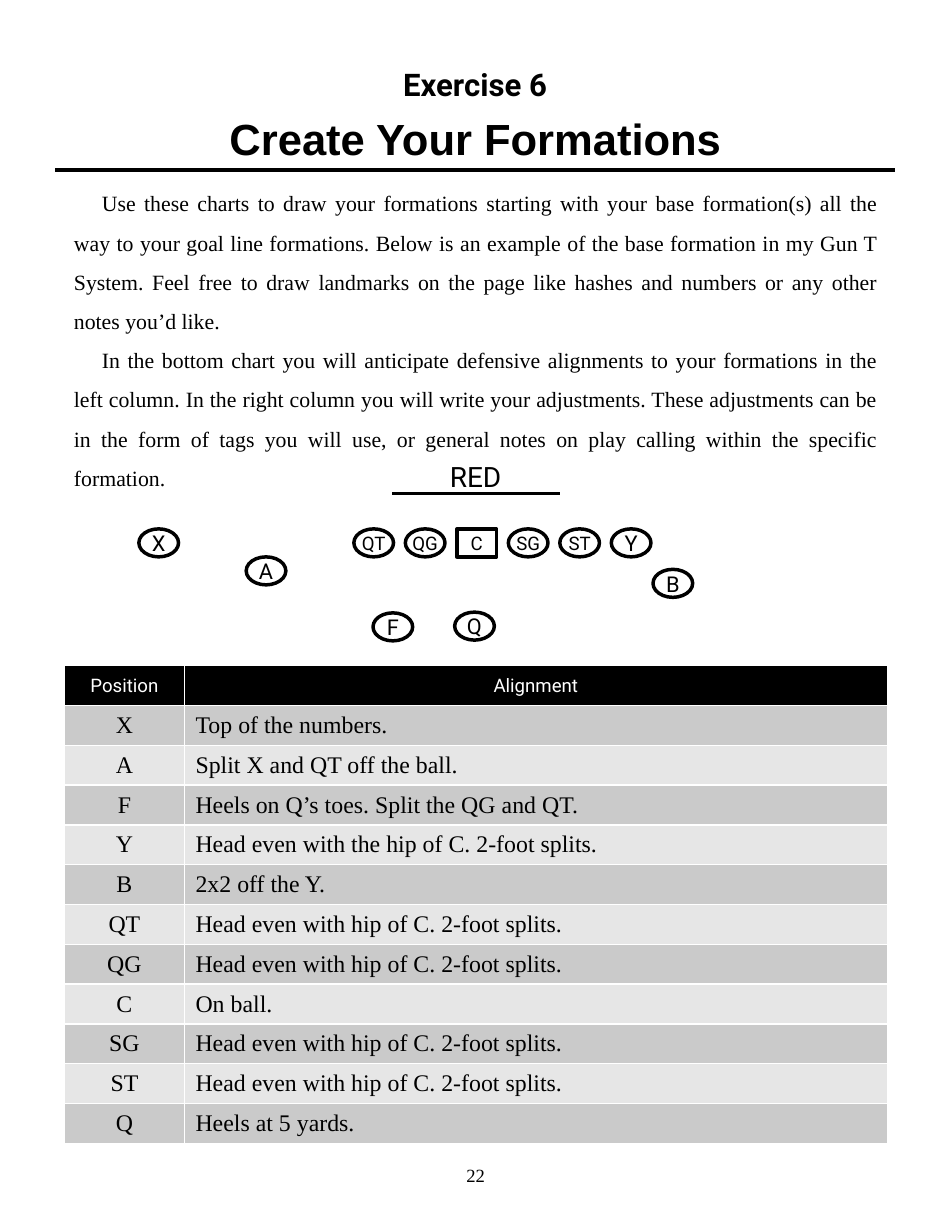
from lxml.etree import SubElement
from pptx import Presentation
from pptx.dml.color import RGBColor
from pptx.enum.shapes import MSO_CONNECTOR, MSO_SHAPE
from pptx.enum.text import MSO_ANCHOR, MSO_AUTO_SIZE, PP_ALIGN
from pptx.oxml.ns import qn
from pptx.util import Pt

BLACK = RGBColor(0, 0, 0)
WHITE = RGBColor(255, 255, 255)
DARK_BAND = RGBColor(0xCA, 0xCA, 0xCA)
LIGHT_BAND = RGBColor(0xE6, 0xE6, 0xE6)
SANS, SERIF, TITLE_FONT = "Roboto", "Times New Roman", "Arial"

INSTRUCTIONS = [
    "Use these charts to draw your formations starting with your base formation(s) "
    "all the way to your goal line formations. Below is an example of the base "
    "formation in my Gun T System. Feel free to draw landmarks on the page like "
    "hashes and numbers or any other notes you’d like.",
    "In the bottom chart you will anticipate defensive alignments to your formations "
    "in the left column. In the right column you will write your adjustments. These "
    "adjustments can be in the form of tags you will use, or general notes on play "
    "calling within the specific formation.",
]
LINE_SPLITS = "Head even with hip of C. 2-foot splits."
ALIGNMENTS = [
    ("Position", "Alignment"),
    ("X", "Top of the numbers."),
    ("A", "Split X and QT off the ball."),
    ("F", "Heels on Q’s toes. Split the QG and QT."),
    ("Y", "Head even with the hip of C. 2-foot splits."),
    ("B", "2x2 off the Y."),
    ("QT", LINE_SPLITS),
    ("QG", LINE_SPLITS),
    ("C", "On ball."),
    ("SG", LINE_SPLITS),
    ("ST", LINE_SPLITS),
    ("Q", "Heels at 5 yards."),
]
# Linemen stand at an equal pitch; the others are offsets from the formation box
LINEMEN = ["QT", "QG", "C", "SG", "ST", "Y"]
BACKS = {"X": (0, 59), "A": (69, 77), "B": (330.5, 85), "F": (150.5, 113), "Q": (203, 112.5)}


def place(shape, box):
    shape.left, shape.top, shape.width, shape.height = (Pt(length) for length in box)


def format_paragraph(paragraph, font_name, size, color=BLACK, bold=None,
                     align=PP_ALIGN.CENTER, spacing=None):
    paragraph.alignment = align
    paragraph.line_spacing = spacing
    for run in paragraph.runs:
        font = run.font
        font.name, font.size, font.bold = font_name, Pt(size), bold
        font.color.rgb = color


def add_label(shapes, box, text, font_name, size, anchor=MSO_ANCHOR.TOP, **style):
    label = shapes.add_textbox(*(Pt(length) for length in box))
    text_frame = label.text_frame
    text_frame.word_wrap = True
    text_frame.vertical_anchor = anchor
    text_frame.text = text
    format_paragraph(text_frame.paragraphs[0], font_name, size, **style)


def add_rule(shapes, left, right, y, width):
    rule = shapes.add_connector(MSO_CONNECTOR.STRAIGHT, Pt(left), Pt(y), Pt(right), Pt(y))
    rule.line.color.rgb = BLACK
    rule.line.width = Pt(width)
    SubElement(rule._element.spPr, qn("a:effectLst"))


def add_heading(slide, box):
    left, top, width, height = box
    add_label(slide.shapes, (left, top, width, 32), "Exercise 6", SANS, 20, bold=True)
    title = slide.shapes.title
    place(title, (left, top + 30, width, 41))
    title.text_frame.text = "Create Your Formations"
    title.text_frame.vertical_anchor = MSO_ANCHOR.TOP
    title.text_frame.auto_size = MSO_AUTO_SIZE.NONE
    format_paragraph(title.text_frame.paragraphs[0], TITLE_FONT, 28, bold=True)
    add_rule(slide.shapes, left + 36, left + width - 36, top + height, 3)


def add_instructions(slide, box):
    body = slide.placeholders[1]
    place(body, box)
    text_frame = body.text_frame
    text_frame.text = "\n".join(INSTRUCTIONS)
    text_frame.auto_size = MSO_AUTO_SIZE.NONE
    for paragraph in text_frame.paragraphs:
        format_paragraph(paragraph, SERIF, 14, align=PP_ALIGN.JUSTIFY, spacing=1.5)
        paragraph.space_before = Pt(0)
        # First-line indent without a bullet
        properties = paragraph._p.get_or_add_pPr()
        properties.set("marL", "0")
        properties.set("indent", str(Pt(18)))
        SubElement(properties, qn("a:buNone"))


def add_player(shapes, name, left, top):
    outline = MSO_SHAPE.RECTANGLE if name == "C" else MSO_SHAPE.OVAL
    player = shapes.add_shape(outline, Pt(left), Pt(top), Pt(25.5), Pt(18))
    player.shadow.inherit = False
    player.fill.solid()
    player.fill.fore_color.rgb = WHITE
    player.line.color.rgb = BLACK
    player.line.width = Pt(2.25)
    text_frame = player.text_frame
    text_frame.margin_left = text_frame.margin_right = 0
    text_frame.margin_top = text_frame.margin_bottom = 0
    text_frame.vertical_anchor = MSO_ANCHOR.MIDDLE
    text_frame.text = name
    size = 12 if name in LINEMEN[:5] else 14
    format_paragraph(text_frame.paragraphs[0], SANS, size)


def add_formation(slide, box):
    left, top, width, height = box
    shapes = slide.shapes.add_group_shape().shapes
    for index, name in enumerate(LINEMEN):
        add_player(shapes, name, left + 138.2 + 33.1 * index, top + 59)
    for name, (across, down) in BACKS.items():
        add_player(shapes, name, left + across, top + down)
    # Formation name
    add_rule(shapes, left + 162.7, left + 270.7, top + 36.5, 2)
    add_label(shapes, (left + 162.7, top, 107.5, 36), "RED", SANS, 18, spacing=1.5)


def add_alignment_table(slide, box):
    left, top, width, height = box
    frame = slide.shapes.add_table(len(ALIGNMENTS), 2, Pt(left), Pt(top), Pt(width), Pt(height))
    table = frame.table
    table.columns[0].width = Pt(77)
    table.columns[1].width = Pt(width - 77)
    for row, texts in enumerate(ALIGNMENTS):
        header = row == 0
        for column, text in enumerate(texts):
            cell = table.cell(row, column)
            cell.text = text
            cell.vertical_anchor = MSO_ANCHOR.MIDDLE
            cell.fill.solid()
            band = DARK_BAND if row % 2 else LIGHT_BAND
            cell.fill.fore_color.rgb = BLACK if header else band
            paragraph = cell.text_frame.paragraphs[0]
            if header:
                format_paragraph(paragraph, SANS, 12, color=WHITE)
            else:
                align = PP_ALIGN.LEFT if column else PP_ALIGN.CENTER
                format_paragraph(paragraph, SERIF, 15.3, align=align)


def add_page_number(slide, box):
    add_label(slide.shapes, box, "22", SERIF, 12, anchor=MSO_ANCHOR.MIDDLE)


def main():
    presentation = Presentation()
    presentation.slide_width, presentation.slide_height = Pt(612), Pt(792)
    slide = presentation.slides.add_slide(presentation.slide_layouts[1])
    add_heading(slide, (-0.5, 38.2, 612, 71.2))
    add_alignment_table(slide, (41.5, 428, 529, 306))
    add_instructions(slide, (40.3, 110.2, 531.4, 211))
    add_formation(slide, (89.3, 281, 356, 131))
    add_page_number(slide, (237, 734.4, 137.5, 42.5))
    presentation.save("out.pptx")


if __name__ == "__main__":
    main()
